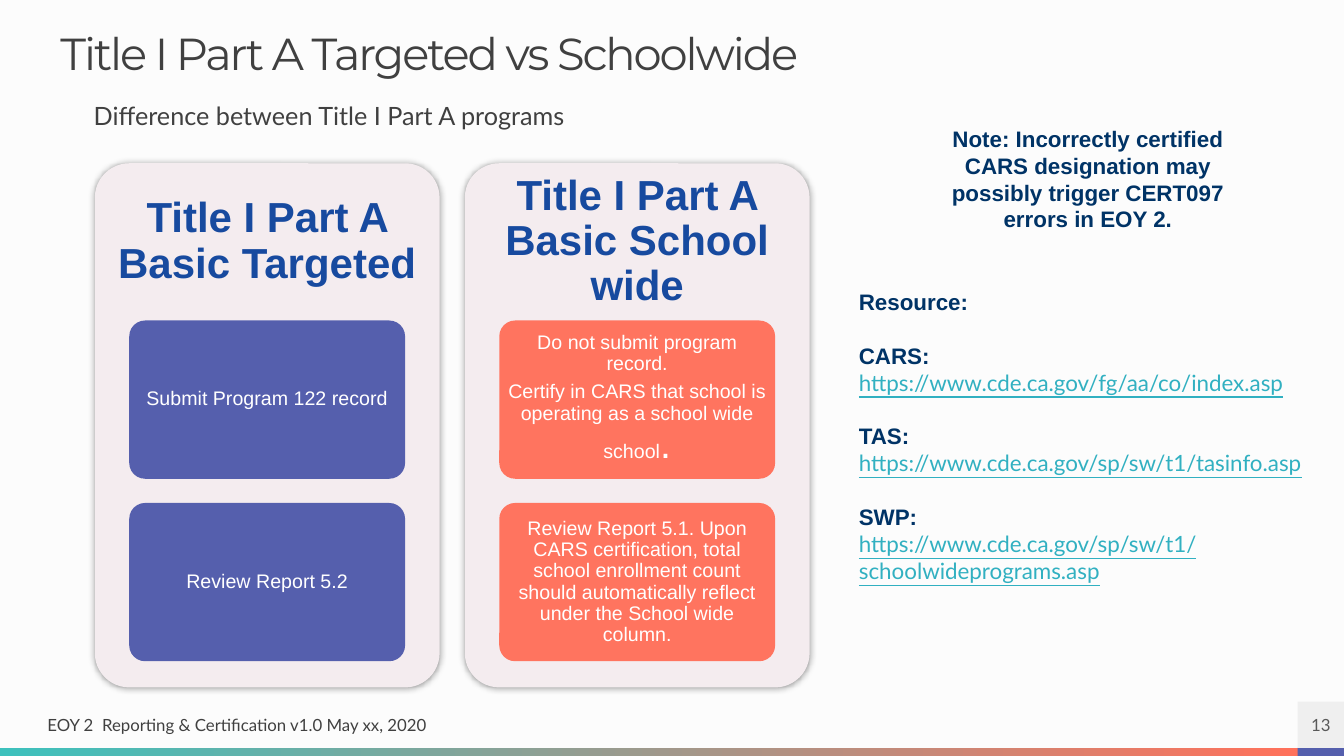
from lxml import etree
from pptx import Presentation
from pptx import util as u
from pptx.dml.color import RGBColor
from pptx.enum import shapes, text
from pptx.oxml import ns

# Content
TITLE = "Title I Part A Targeted vs Schoolwide"
SUBTITLE = "Difference between Title I Part A programs"
FOOTER = "EOY 2  Reporting & Certification v1.0 May xx, 2020"
PAGE = "13"
PROGRAMS = [
    ("Title I Part A Basic Targeted", "indigo",
     [["Submit Program 122 record"], ["Review Report 5.2"]]),
    ("Title I Part A Basic School wide", "coral",
     [["Do not submit program record.",
       "Certify in CARS that school is operating as a school wide school"],
      ["Review Report 5.1. Upon CARS certification, total school enrollment "
       "count should automatically reflect under the School wide column."]]),
]
BIG_STOP = "."  # large full stop closing the CARS step
NOTE = ("Note: Incorrectly certified CARS designation may possibly trigger "
        "CERT097 errors in EOY 2.")
RESOURCES = [
    ("CARS:", "https://www.cde.ca.gov/fg/aa/co/index.asp"),
    ("TAS:", "https://www.cde.ca.gov/sp/sw/t1/tasinfo.asp"),
    ("SWP:", "https://www.cde.ca.gov/sp/sw/t1/schoolwideprograms.asp"),
]
COLORS = {
    "page": "FCFCFC", "ink": "404040", "grey": "595959", "pale": "EFEFEF",
    "card": "F4ECEF", "heading": "174A9F", "indigo": "555FAD",
    "coral": "FF745F", "white": "FFFFFF", "navy": "003366",
    "link": "31B0C1", "teal": "3DC1BD", "orange": "FF715B",
}

# Grid, in inches
WIDTH, HEIGHT = 13.33, 7.5
STRIP = 0.08
CORNER = 0.46
CARD_LEFT, CARD_TOP, CARD_W, CARD_H, CARD_PITCH = 0.94, 1.62, 3.42, 5.2, 3.67
HEAD_H = CARD_H * 0.3
STEP_W, STEP_H, STEP_PITCH = CARD_W * 0.8, 1.57, 1.81
LINE = u.Pt(19.2)


def color(name):
    return RGBColor.from_string(COLORS[name])


def inches(*lengths):
    return [u.Inches(length) for length in lengths]


def setup_frame(frame, margins=(0, 0), anchor=text.MSO_ANCHOR.TOP):
    frame.word_wrap = True
    frame.auto_size = text.MSO_AUTO_SIZE.NONE
    frame.vertical_anchor = anchor
    frame.margin_left = frame.margin_right = u.Inches(margins[0])
    frame.margin_top = frame.margin_bottom = u.Inches(margins[1])
    return frame


def add_text(box, margins=(0, 0), anchor=text.MSO_ANCHOR.TOP):
    return setup_frame(slide.shapes.add_textbox(*inches(*box)).text_frame,
                       margins, anchor)


def write(paragraph, words, size, font, ink, bold=False, align="LEFT",
          spacing=None, after=None):
    paragraph.text = words
    paragraph.alignment = getattr(text.PP_ALIGN, align)
    paragraph.line_spacing = spacing
    paragraph.space_after = after
    paragraph.font.size = u.Pt(size)
    paragraph.font.name = font
    paragraph.font.bold = bold
    paragraph.font.color.rgb = color(ink)


def add_block(box, fill, rounded=False):
    kind = "ROUNDED_RECTANGLE" if rounded else "RECTANGLE"
    block = slide.shapes.add_shape(getattr(shapes.MSO_SHAPE, kind), *inches(*box))
    block.shadow.inherit = False
    block.line.fill.background()
    block.fill.solid()
    block.fill.fore_color.rgb = color(fill)
    if rounded:
        block.adjustments[0] = 0.1
    return block


def add_glow(block):
    effects = block._element.spPr.find(ns.qn("a:effectLst"))
    shadow = etree.SubElement(effects, ns.qn("a:outerShdw"),
                              blurRad=str(u.Pt(5)), dist="0", dir="0")
    black = etree.SubElement(shadow, ns.qn("a:srgbClr"), val="000000")
    etree.SubElement(black, ns.qn("a:alpha"), val="40000")


deck = Presentation()
deck.slide_width, deck.slide_height = inches(WIDTH, HEIGHT)
slide = deck.slides.add_slide(deck.slide_layouts[5])
slide.background.fill.solid()
slide.background.fill.fore_color.rgb = color("page")

# Title and subtitle
title = slide.shapes.title
title.left, title.top, title.width, title.height = inches(0.6, 0.32, 10.9, 0.66)
heading = setup_frame(title.text_frame).paragraphs[0]
write(heading, TITLE, 32, "Montserrat", "ink", spacing=0.9)
heading.runs[0]._r.get_or_add_rPr().set("spc", "-150")
subtitle = add_text((0.93, 0.99, 12.4, 0.39))
write(subtitle.paragraphs[0], SUBTITLE, 18, "Lato", "ink")

# Bottom strip, footer and page number
strip_top = HEIGHT - STRIP
strip = add_block((0, strip_top, WIDTH - CORNER, STRIP), "teal")
strip.fill.gradient()
strip.fill.gradient_angle = 0
for stop, name in zip(strip.fill.gradient_stops, ("teal", "orange")):
    stop.color.rgb = color(name)
add_block((WIDTH - CORNER, strip_top, CORNER, STRIP), "indigo")
footer = add_text((0.47, strip_top - CORNER, 5.98, CORNER),
                  anchor=text.MSO_ANCHOR.MIDDLE)
write(footer.paragraphs[0], FOOTER, 12, "Lato", "ink")
page = add_block((WIDTH - CORNER, strip_top - CORNER, CORNER, CORNER), "pale")
page_frame = setup_frame(page.text_frame, anchor=text.MSO_ANCHOR.MIDDLE)
write(page_frame.paragraphs[0], PAGE, 12, "Lato", "grey", align="CENTER")

# Program cards, each with two steps
for column, (program, fill, steps) in enumerate(PROGRAMS):
    left = CARD_LEFT + column * CARD_PITCH
    add_glow(add_block((left, CARD_TOP, CARD_W, CARD_H), "card", rounded=True))
    head = add_text((left, CARD_TOP, CARD_W, HEAD_H), (0.12, 0.12),
                    text.MSO_ANCHOR.MIDDLE)
    write(head.paragraphs[0], program, 30, "Arial", "heading", True, "CENTER",
          0.9, u.Pt(10.5))
    for row, lines in enumerate(steps):
        step = add_block((left + (CARD_W - STEP_W) / 2,
                          CARD_TOP + HEAD_H + row * STEP_PITCH,
                          STEP_W, STEP_H), fill, rounded=True)
        frame = setup_frame(step.text_frame, (0.04, 0.03), text.MSO_ANCHOR.MIDDLE)
        for index, line in enumerate(lines):
            paragraph = frame.add_paragraph() if index else frame.paragraphs[0]
            write(paragraph, line, 14, "Arial", "white", align="CENTER",
                  spacing=0.9, after=u.Pt(5))
        if len(lines) > 1:
            full_stop = paragraph.add_run()
            full_stop.text = BIG_STOP
            full_stop.font.size = u.Pt(28)

# Note and resources
note = add_text((9.11, 1.19, 3.36, 1.18), (0.1, 0.05))
write(note.paragraphs[0], NOTE, 16, "Arial", "navy", True, "CENTER", LINE)
resources = add_text((8.42, 2.81, 4.68, 3.26), (0.1, 0.05))
write(resources.paragraphs[0], "Resource:", 16, "Arial", "navy", True, spacing=LINE)
for label, address in RESOURCES:
    name = resources.add_paragraph()
    write(name, label, 16, "Arial", "navy", True, spacing=LINE)
    name.space_before = LINE
    link = resources.add_paragraph()
    write(link, address, 16, "Lato", "link", spacing=LINE)
    link.font.underline = True

deck.save("out.pptx")
